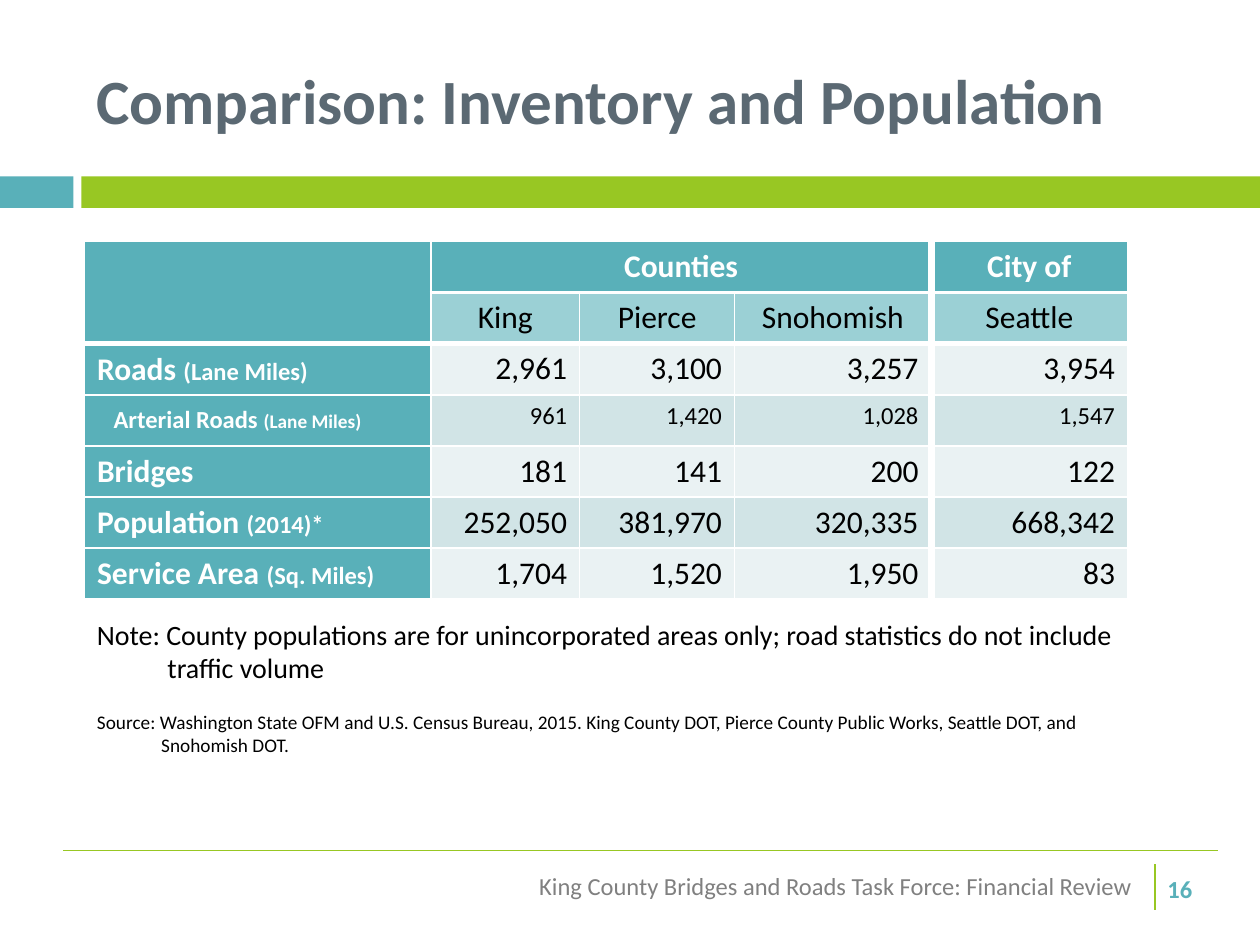
"""Build the slide comparing road inventory and population by jurisdiction."""
from dataclasses import dataclass
from typing import NamedTuple

import pptx
import pptx.dml.color
import pptx.enum.shapes
import pptx.enum.text
import pptx.oxml
import pptx.oxml.ns
import pptx.util

Pt = pptx.util.Pt
Align = pptx.enum.text.PP_ALIGN
Anchor = pptx.enum.text.MSO_ANCHOR


@dataclass(frozen=True)
class Theme:
    font: str = "Calibri"
    teal: str = "59B0B9"
    pale_teal: str = "9BD0D5"
    green: str = "98C723"
    slate: str = "5B6973"
    grey: str = "808080"
    black: str = "000000"
    white: str = "FFFFFF"
    bands: tuple[str, str] = ("EAF2F3", "D1E4E6")
    title: float = 36
    table: float = 18
    note: float = 16
    small: float = 14
    fine: float = 11
    thin: float = 1
    header_rule: float = 1.5
    body_rule: float = 3
    city_rule: float = 4.5


class Box(NamedTuple):
    left: float
    top: float
    width: float
    height: float


class Measure(NamedTuple):
    label: str
    unit: str
    values: tuple[str, ...]
    size: float
    unit_size: float
    indent: float = 0


class Remark(NamedTuple):
    text: str
    size: float
    hanging: float
    space_before: float


THEME = Theme()
JURISDICTIONS = ("King", "Pierce", "Snohomish", "Seattle")
COLUMN_WIDTHS = (198, 85, 88.5, 112.3, 112.3)
ROW_HEIGHT = 29.2
HEADER_ROWS = 2
CITY_COLUMN = 4
MEASURES = (
    Measure("Roads ", "(Lane Miles)", ("2,961", "3,100", "3,257", "3,954"),
            THEME.table, THEME.small),
    Measure("Arterial Roads ", "(Lane Miles)", ("961", "1,420", "1,028", "1,547"),
            THEME.small, THEME.fine, 9.4),
    Measure("Bridges", "", ("181", "141", "200", "122"), THEME.table, THEME.small),
    Measure("Population ", "(2014)*", ("252,050", "381,970", "320,335", "668,342"),
            THEME.table, THEME.small),
    Measure("Service Area ", "(Sq. Miles)", ("1,704", "1,520", "1,950", "83"),
            THEME.table, THEME.small),
)
REMARKS = (
    Remark("Note: County populations are for unincorporated areas only; road statistics "
           "do not include traffic volume", THEME.note, 40.3, 0),
    Remark("Source: Washington State OFM and U.S. Census Bureau, 2015. King County DOT, "
           "Pierce County Public Works, Seattle DOT, and Snohomish DOT.", THEME.fine, 36.7, 14.6),
)


def rgb(colour: str) -> pptx.dml.color.RGBColor:
    return pptx.dml.color.RGBColor.from_string(colour)


def style_run(run, size: float, colour: str, bold: bool = False) -> None:
    run.font.name = THEME.font
    run.font.size = Pt(size)
    run.font.bold = bold
    run.font.color.rgb = rgb(colour)


def write(paragraph, text: str, size: float, colour: str, bold: bool = False,
          align=Align.LEFT) -> None:
    paragraph.text = text
    paragraph.alignment = align
    for run in paragraph.runs:
        style_run(run, size, colour, bold)


def indent(paragraph, left: float, first: float = 0) -> None:
    properties = paragraph._p.get_or_add_pPr()
    properties.set("marL", str(Pt(left)))
    properties.set("indent", str(Pt(first)))


def add_bar(slide, box: Box, colour: str) -> None:
    bar = slide.shapes.add_shape(pptx.enum.shapes.MSO_SHAPE.RECTANGLE, *map(Pt, box))
    bar.shadow.inherit = False
    bar.fill.solid()
    bar.fill.fore_color.rgb = rgb(colour)
    bar.line.fill.background()


def add_rule(slide, x1: float, y1: float, x2: float, y2: float) -> None:
    rule = slide.shapes.add_connector(
        pptx.enum.shapes.MSO_CONNECTOR.STRAIGHT, Pt(x1), Pt(y1), Pt(x2), Pt(y2))
    rule.line.color.rgb = rgb(THEME.green)
    rule.line.width = Pt(0.79)
    rule._element.spPr.append(pptx.oxml.parse_xml(
        f"<a:effectLst {pptx.oxml.ns.nsdecls('a')}/>"))


def add_text_frame(slide, box: Box, anchor=Anchor.TOP):
    frame = slide.shapes.add_textbox(*map(Pt, box)).text_frame
    frame.word_wrap = True
    frame.vertical_anchor = anchor
    return frame


def column_rule(edge: int, row: int) -> float:
    if edge == CITY_COLUMN:
        return THEME.city_rule
    return THEME.header_rule if edge == 1 and row < HEADER_ROWS else THEME.thin


def row_rule(edge: int) -> float:
    return {1: THEME.header_rule, HEADER_ROWS: THEME.body_rule}.get(edge, THEME.thin)


def paint_cell(cell, row: int, column: int, colour: str) -> None:
    bottom = row + (cell.span_height if cell.is_merge_origin else 1)
    right = column + (cell.span_width if cell.is_merge_origin else 1)
    widths = {"lnL": column_rule(column, row), "lnR": column_rule(right, row),
              "lnT": row_rule(row), "lnB": row_rule(bottom)}
    properties = cell._tc.get_or_add_tcPr()
    for tag, width in widths.items():
        properties.append(pptx.oxml.parse_xml(
            f'<a:{tag} {pptx.oxml.ns.nsdecls("a")} w="{Pt(width)}"><a:solidFill>'
            f'<a:srgbClr val="{THEME.white}"/></a:solidFill></a:{tag}>'))
    cell.fill.solid()
    cell.fill.fore_color.rgb = rgb(colour)


def cell_colour(row: int, column: int) -> str:
    if row == 0 or column == 0:
        return THEME.teal
    return THEME.pale_teal if row < HEADER_ROWS else THEME.bands[row % 2]


def fill_measure(table, row: int, measure: Measure) -> None:
    label_cell = table.cell(row, 0)
    label_cell.vertical_anchor = Anchor.MIDDLE
    label = label_cell.text_frame.paragraphs[0]
    write(label, measure.label, measure.size, THEME.white, True)
    indent(label, measure.indent)
    if measure.unit:
        unit = label.add_run()
        unit.text = measure.unit
        style_run(unit, measure.unit_size, THEME.white, True)
    for column, value in enumerate(measure.values, 1):
        write(table.cell(row, column).text_frame.paragraphs[0], value, measure.size,
              THEME.black, align=Align.RIGHT)


def add_comparison(slide) -> None:
    rows = HEADER_ROWS + len(MEASURES)
    table = slide.shapes.add_table(
        rows, len(COLUMN_WIDTHS), Pt(48.3), Pt(138), Pt(sum(COLUMN_WIDTHS)),
        Pt(rows * ROW_HEIGHT)).table
    table.horz_banding = False
    for column, width in zip(table.columns, COLUMN_WIDTHS):
        column.width = Pt(width)
    for row in table.rows:
        row.height = Pt(ROW_HEIGHT)
    table.cell(0, 0).merge(table.cell(1, 0))
    table.cell(0, 1).merge(table.cell(0, CITY_COLUMN - 1))
    for row in range(rows):
        for column in range(len(COLUMN_WIDTHS)):
            paint_cell(table.cell(row, column), row, column, cell_colour(row, column))
    for column, heading in ((1, "Counties"), (CITY_COLUMN, "City of")):
        write(table.cell(0, column).text_frame.paragraphs[0], heading, THEME.table,
              THEME.white, True, Align.CENTER)
    for column, name in enumerate(JURISDICTIONS, 1):
        write(table.cell(1, column).text_frame.paragraphs[0], name, THEME.table,
              THEME.black, align=Align.CENTER)
    for row, measure in enumerate(MEASURES, HEADER_ROWS):
        fill_measure(table, row, measure)


def add_remarks(slide) -> None:
    frame = add_text_frame(slide, Box(48.3, 349.2, 596.2, 87))
    for index, remark in enumerate(REMARKS):
        paragraph = frame.add_paragraph() if index else frame.paragraphs[0]
        write(paragraph, remark.text, remark.size, THEME.black)
        indent(paragraph, remark.hanging, -remark.hanging)
        if index:
            paragraph.space_before = Pt(remark.space_before)


def add_title(slide) -> None:
    title = slide.shapes.title
    title.left, title.top, title.width, title.height = map(Pt, Box(48, 18, 642, 78))
    title.text_frame.vertical_anchor = Anchor.MIDDLE
    title.text_frame.auto_size = pptx.enum.text.MSO_AUTO_SIZE.NONE
    write(title.text_frame.paragraphs[0], "Comparison: Inventory and Population",
          THEME.title, THEME.slate, True)


def main() -> None:
    deck = pptx.Presentation()
    deck.slide_width, deck.slide_height = Pt(720), Pt(540)
    slide = deck.slides.add_slide(deck.slide_layouts[5])
    add_bar(slide, Box(0, 100.8, 42, 18), THEME.teal)
    add_bar(slide, Box(46.5, 100.8, 673.5, 18), THEME.green)
    add_rule(slide, 36, 486, 696, 486)
    add_rule(slide, 660, 494, 660, 520)
    page_number = add_text_frame(slide, Box(660, 496, 48, 24.5))
    write(page_number.paragraphs[0], "16", THEME.small, THEME.teal, True)
    add_title(slide)
    footer = add_text_frame(slide, Box(204, 492, 450, 28.8), Anchor.MIDDLE)
    write(footer.paragraphs[0], "King County Bridges and Roads Task Force: Financial Review",
          THEME.small, THEME.grey, align=Align.RIGHT)
    add_comparison(slide)
    add_remarks(slide)
    deck.save("out.pptx")


if __name__ == "__main__":
    main()
